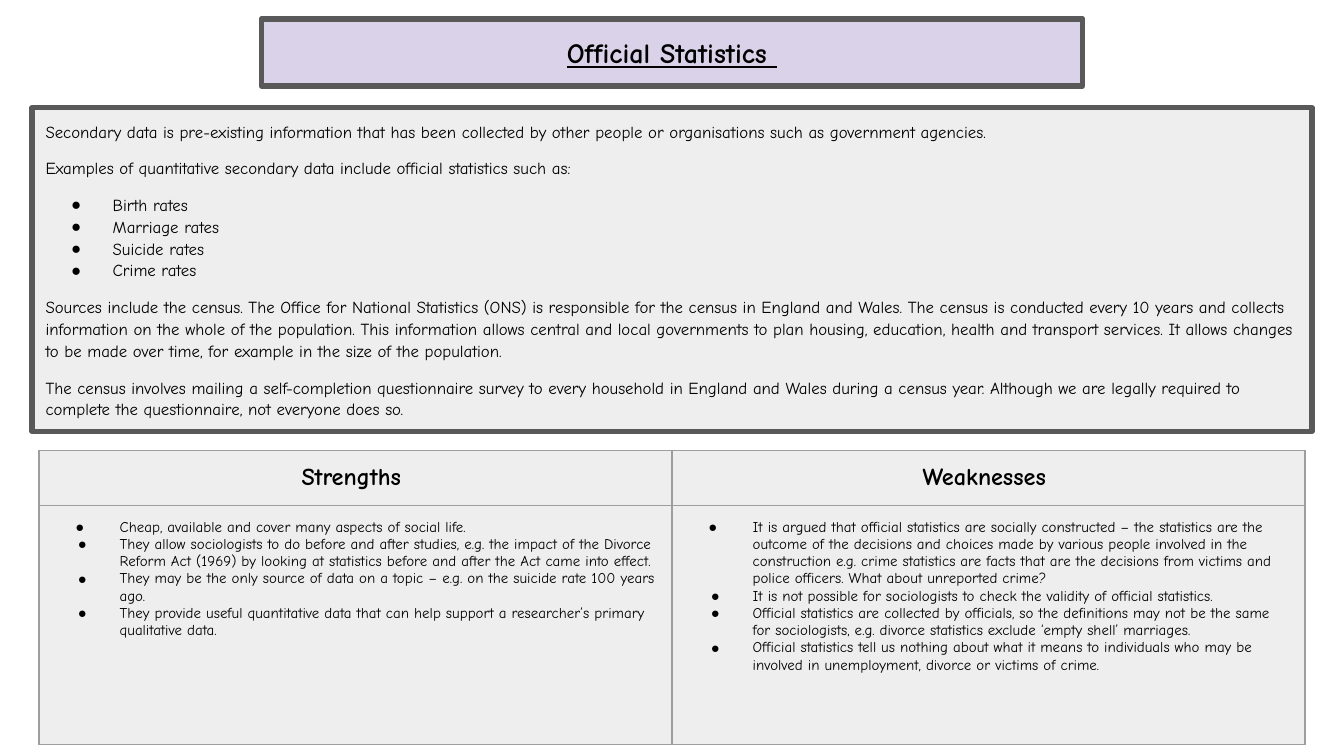
from lxml import etree
from pptx import Presentation
from pptx.dml.color import RGBColor
from pptx.enum.shapes import MSO_SHAPE
from pptx.enum.text import MSO_ANCHOR, PP_ALIGN
from pptx.oxml.ns import qn
from pptx.util import Inches, Pt

RECTANGLE = MSO_SHAPE.RECTANGLE
MIDDLE = MSO_ANCHOR.MIDDLE
LEFT, CENTER = PP_ALIGN.LEFT, PP_ALIGN.CENTER

WIDTH = 10
HEIGHT = WIDTH * 9 / 16
FONT, BULLET_FONT = "Comic Neue", "Arial"
INK, GREY, LILAC = "000000", "EEEEEE", "D9D2E9"
FRAME, GRID = "595959", "9E9E9E"
INSET = 0.1

INTRO = [
    "Secondary data is pre-existing information that has been collected by other people or organisations such as government agencies.",
    "Examples of quantitative secondary data include official statistics such as:",
]
RATES = ["Birth rates", "Marriage rates", "Suicide rates", "Crime rates"]
CENSUS = [
    "Sources include the census. The Office for National Statistics (ONS) is responsible for the census in England and Wales. The census is conducted every 10 years and collects information on the whole of the population. This information allows central and local governments to plan housing, education, health and transport services. It allows changes to be made over time, for example in the size of the population.",
    "The census involves mailing a self-completion questionnaire survey to every household in England and Wales during a census year. Although we are legally required to complete the questionnaire, not everyone does so.",
]
EVALUATION = {
    "Strengths ": [
        "Cheap, available and cover many aspects of social life.",
        "They allow sociologists to do before and after studies, e.g. the impact of the Divorce Reform Act (1969) by looking at statistics before and after the Act came into effect.",
        "They may be the only source of data on a topic – e.g. on the suicide rate 100 years ago.",
        "They provide useful quantitative data that can help support a researcher’s primary qualitative data.",
    ],
    "Weaknesses ": [
        "It is argued that official statistics are socially constructed – the statistics are the outcome of the decisions and choices made by various people involved in the construction e.g. crime statistics are facts that are the decisions from victims and police officers. What about unreported crime?",
        "It is not possible for sociologists to check the validity of official statistics.",
        "Official statistics are collected by officials, so the definitions may not be the same for sociologists, e.g. divorce statistics exclude ‘empty shell’ marriages.",
        "Official statistics tell us nothing about what it means to individuals who may be involved in unemployment, divorce or victims of crime.",
    ],
}


def paint(fill, color):
    fill.solid()
    fill.fore_color.rgb = RGBColor.from_string(color)


def add_para(frame, text, size, bold=False, underline=False, align=LEFT):
    """Fill the frame's empty first paragraph, or append a new one."""
    para = frame.paragraphs[0]
    if para.runs:
        para = frame.add_paragraph()
    para.alignment = align
    span = para.add_run()
    span.text = text
    span.font.name, span.font.size = FONT, Pt(size)
    span.font.bold, span.font.underline = bold, underline
    paint(span.font.fill, INK)
    return para


def add_bullet(para, hanging=0.31):
    props = para._p.get_or_add_pPr()
    props.set("marL", str(Inches(0.5)))
    props.set("indent", str(-Inches(hanging)))
    color = etree.SubElement(props, qn("a:buClr"))
    etree.SubElement(color, qn("a:srgbClr"), val=INK)
    etree.SubElement(props, qn("a:buFont"), typeface=BULLET_FONT)
    etree.SubElement(props, qn("a:buChar"), char="●")


def set_insets(target):
    target.margin_left = target.margin_right = Inches(INSET)
    target.margin_top = target.margin_bottom = Inches(INSET)


def add_panel(page, top, width, height, color):
    """Framed box, centred across the slide."""
    left = (WIDTH - width) / 2
    box = page.shapes.add_shape(
        RECTANGLE, Inches(left), Inches(top), Inches(width), Inches(height))
    box.shadow.inherit = False
    paint(box.fill, color)
    paint(box.line.fill, FRAME)
    box.line.width = Pt(3)
    frame = box.text_frame
    frame.word_wrap = True
    frame.vertical_anchor = MIDDLE
    set_insets(frame)
    return frame


def style_cell(cell):
    set_insets(cell)
    paint(cell.fill, GREY)
    props = cell._tc.get_or_add_tcPr()
    # Borders come before the fill in the cell properties
    for place, side in enumerate(("lnL", "lnR", "lnT", "lnB")):
        line = etree.Element(qn(f"a:{side}"), w=str(Pt(0.75)))
        solid = etree.SubElement(line, qn("a:solidFill"))
        etree.SubElement(solid, qn("a:srgbClr"), val=GRID)
        props.insert(place, line)


def add_explanation(page):
    frame = add_panel(page, 0.8, 9.52, 2.41, GREY)
    for text in INTRO + RATES + CENSUS:
        para = add_para(frame, text, 9)
        para.line_spacing = 1.08
        if text not in INTRO[:1] + RATES[1:]:
            para.space_before = Pt(8)
        if text in RATES:
            add_bullet(para)
    para.space_after = Pt(8)


def add_evaluation(page):
    column_width, row_heights = 4.71, (0.41, 1.78)
    width = column_width * len(EVALUATION)
    table = page.shapes.add_table(
        len(row_heights), len(EVALUATION), Inches((WIDTH - width) / 2), Inches(3.35),
        Inches(width), Inches(sum(row_heights))).table
    for row, height in zip(table.rows, row_heights):
        row.height = Inches(height)
    for column, (heading, points) in enumerate(EVALUATION.items()):
        table.columns[column].width = Inches(column_width)
        head, body = table.cell(0, column), table.cell(1, column)
        style_cell(head)
        style_cell(body)
        add_para(head.text_frame, heading, 13, bold=True, align=CENTER)
        for number, point in enumerate(points):
            para = add_para(body.text_frame, point, 8)
            add_bullet(para, 0.31 if number else 0.33)


def main():
    deck = Presentation()
    deck.slide_width, deck.slide_height = Inches(WIDTH), Inches(HEIGHT)
    page = deck.slides.add_slide(deck.slide_layouts[6])

    # Title banner
    banner = add_panel(page, 0.14, 6.11, 0.5, LILAC)
    add_para(banner, "Official Statistics ", 15, bold=True, underline=True, align=CENTER)

    # Explanation, then strengths and weaknesses
    add_explanation(page)
    add_evaluation(page)
    deck.save("out.pptx")


if __name__ == "__main__":
    main()
